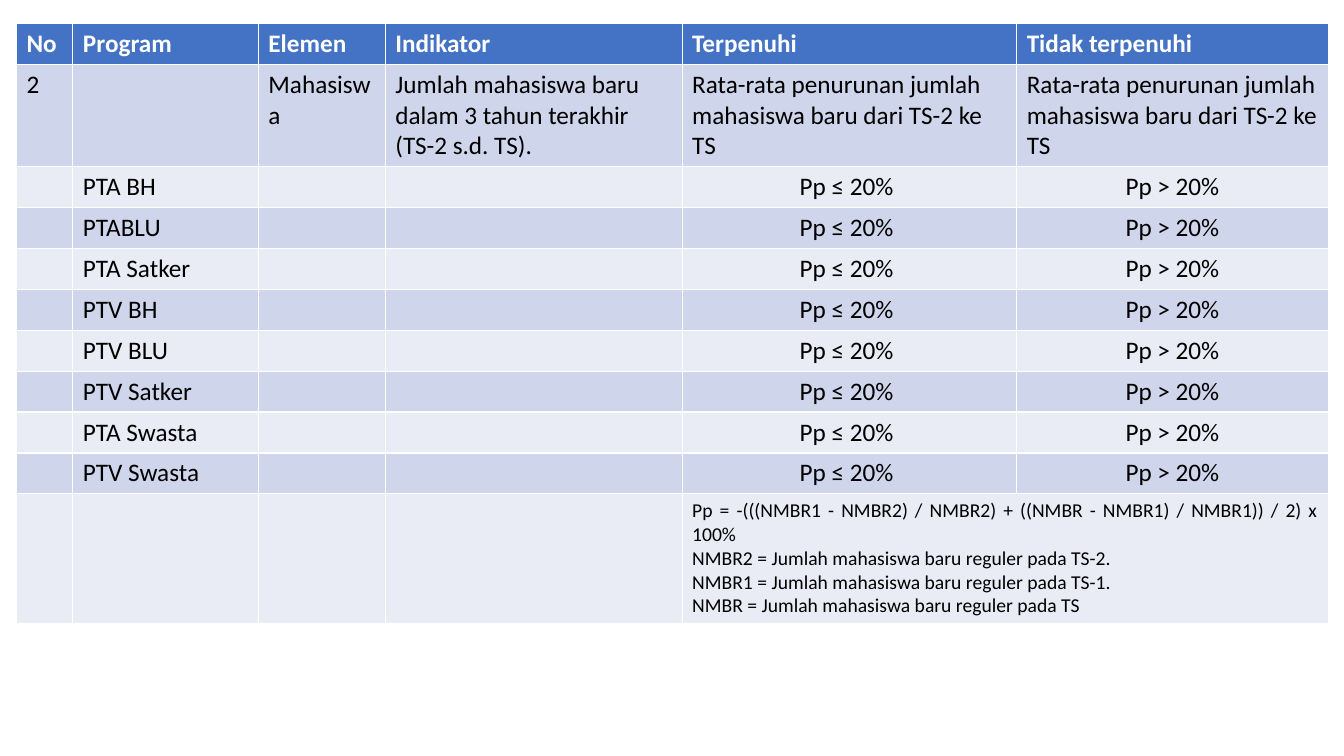
from pptx import Presentation
from pptx.dml.color import RGBColor
from pptx.enum import text
from pptx.util import Pt

HEADER_BLUE = RGBColor(0x44, 0x72, 0xC4)
BAND_DARK = RGBColor(0xCF, 0xD5, 0xEA)
BAND_LIGHT = RGBColor(0xE9, 0xEB, 0xF5)
WHITE = RGBColor(0xFF, 0xFF, 0xFF)
BLACK = RGBColor(0x00, 0x00, 0x00)

LEFT = text.PP_ALIGN.LEFT
CENTER = text.PP_ALIGN.CENTER
JUSTIFY = text.PP_ALIGN.JUSTIFY

COLUMN_WIDTHS = [40.3, 132.5, 90.7, 212, 239, 222.5]
LINE_ROW, CRITERIA_ROW, FORMULA_ROW = 29.17, 73.1, 92.6

HEADERS = ["No", "Program", "Elemen", "Indikator", "Terpenuhi", "Tidak terpenuhi"]
DECLINE = "Rata-rata penurunan jumlah mahasiswa baru dari TS-2 ke TS"
CRITERIA = ["2", "", "Mahasiswa",
            "Jumlah mahasiswa baru dalam 3 tahun terakhir (TS-2 s.d. TS).",
            DECLINE, DECLINE]
PROGRAMS = ["PTA BH", "PTABLU", "PTA Satker", "PTV BH",
            "PTV BLU", "PTV Satker", "PTA Swasta", "PTV Swasta"]
FORMULA = [
    "Pp = -(((NMBR1 - NMBR2) / NMBR2) + ((NMBR - NMBR1) / NMBR1)) / 2) x 100% ",
    "NMBR2 = Jumlah mahasiswa baru reguler pada TS-2. ",
    "NMBR1 = Jumlah mahasiswa baru reguler pada TS-1. ",
    "NMBR = Jumlah mahasiswa baru reguler pada TS",
]


def write_cell(cell, words, size=18, color=BLACK, bold=False, align=LEFT):
    """Write one paragraph per line of words."""
    cell.text = words
    for para in cell.text_frame.paragraphs:
        para.alignment = align
        para.font.name = "Calibri"
        para.font.size = Pt(size)
        para.font.bold = bold
        para.font.color.rgb = color


def fill_row(table, index, color):
    for cell in table.rows[index].cells:
        cell.fill.solid()
        cell.fill.fore_color.rgb = color


def add_criteria_table(page):
    heights = [LINE_ROW, CRITERIA_ROW] + [LINE_ROW] * len(PROGRAMS) + [FORMULA_ROW]
    frame = page.shapes.add_table(len(heights), len(COLUMN_WIDTHS), Pt(11.8), Pt(16.8),
                                  Pt(sum(COLUMN_WIDTHS)), Pt(sum(heights)))
    table = frame.table
    for column, width in zip(table.columns, COLUMN_WIDTHS):
        column.width = Pt(width)

    # Row heights and alternating bands
    for index, height in enumerate(heights):
        table.rows[index].height = Pt(height)
        fill_row(table, index, BAND_DARK if index % 2 else BAND_LIGHT)
    fill_row(table, 0, HEADER_BLUE)

    # Header and criteria
    for column, (header, criterion) in enumerate(zip(HEADERS, CRITERIA)):
        write_cell(table.cell(0, column), header, color=WHITE, bold=True)
        write_cell(table.cell(1, column), criterion)

    # Threshold for each program
    for row, program in enumerate(PROGRAMS, start=2):
        write_cell(table.cell(row, 1), program)
        write_cell(table.cell(row, 4), "Pp ≤ 20% ", align=CENTER)
        write_cell(table.cell(row, 5), "Pp > 20%", align=CENTER)

    # Formula across the last two columns
    last = len(heights) - 1
    formula_cell = table.cell(last, 4)
    formula_cell.merge(table.cell(last, 5))
    write_cell(formula_cell, "\n".join(FORMULA), size=14, align=JUSTIFY)


def main():
    deck = Presentation()
    deck.slide_width, deck.slide_height = Pt(960), Pt(540)
    page = deck.slides.add_slide(deck.slide_layouts[6])
    add_criteria_table(page)
    deck.save("out.pptx")


if __name__ == "__main__":
    main()
